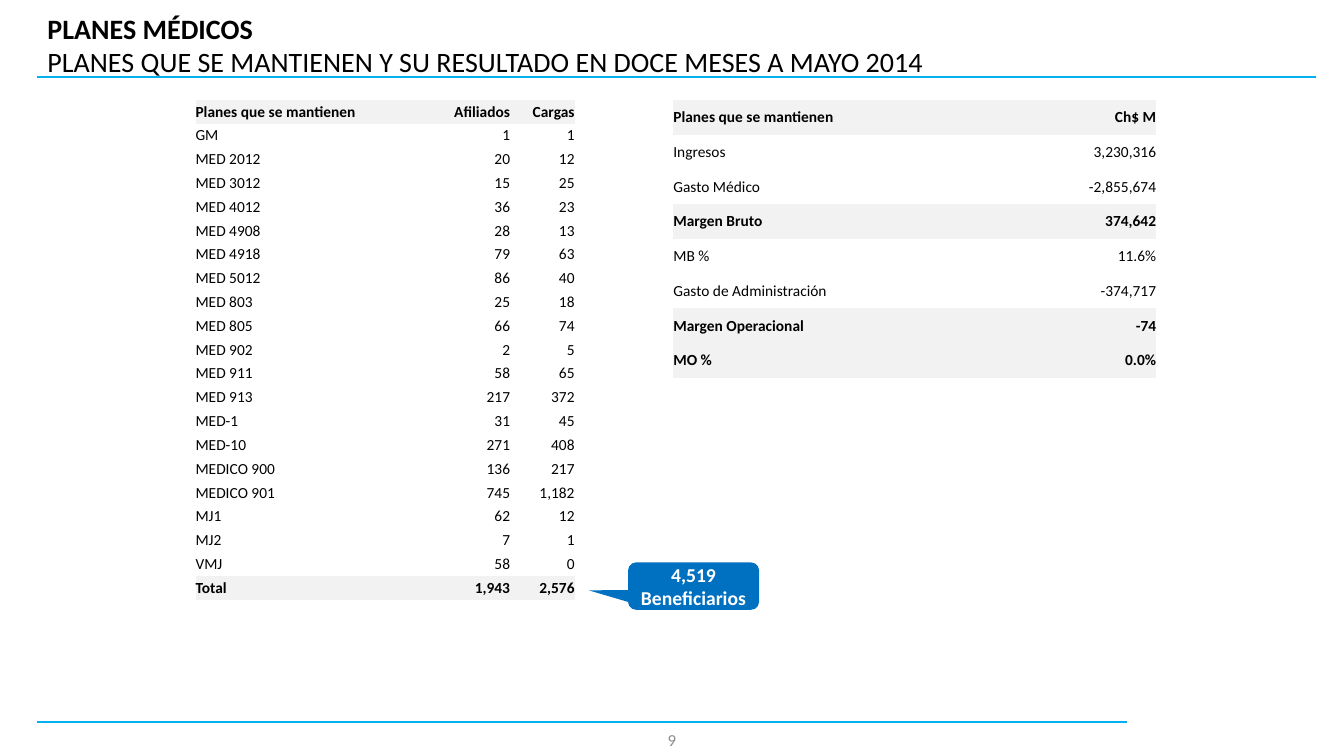
from lxml import etree
from pptx import Presentation
from pptx.dml.color import RGBColor
from pptx.enum.shapes import MSO_CONNECTOR, MSO_SHAPE
from pptx.enum.text import MSO_ANCHOR, MSO_AUTO_SIZE, PP_ALIGN
from pptx.oxml.ns import qn
from pptx.util import Inches, Pt

STRAIGHT = MSO_CONNECTOR.STRAIGHT
CALLOUT = MSO_SHAPE.ROUNDED_RECTANGULAR_CALLOUT
MIDDLE = MSO_ANCHOR.MIDDLE
NO_AUTOFIT = MSO_AUTO_SIZE.NONE
LEFT, CENTER, RIGHT = PP_ALIGN.LEFT, PP_ALIGN.CENTER, PP_ALIGN.RIGHT

BLACK = RGBColor(0x00, 0x00, 0x00)
WHITE = RGBColor(0xFF, 0xFF, 0xFF)
GRAY = RGBColor(0x8C, 0x8C, 0x8C)
BAND = RGBColor(0xF2, 0xF2, 0xF2)
BLUE = RGBColor(0x00, 0x70, 0xC0)
SKY = RGBColor(0x00, 0xB0, 0xF0)

FONT = "Calibri"
PLAIN_TABLE = "{2D5ABB26-0587-4C30-8999-92F81FD0307C}"

AFFILIATES = [
    ("Planes que se mantienen", "Afiliados", "Cargas"),
    ("GM", "1", "1"),
    ("MED 2012", "20", "12"),
    ("MED 3012", "15", "25"),
    ("MED 4012", "36", "23"),
    ("MED 4908", "28", "13"),
    ("MED 4918", "79", "63"),
    ("MED 5012", "86", "40"),
    ("MED 803", "25", "18"),
    ("MED 805", "66", "74"),
    ("MED 902", "2", "5"),
    ("MED 911", "58", "65"),
    ("MED 913", "217", "372"),
    ("MED-1", "31", "45"),
    ("MED-10", "271", "408"),
    ("MEDICO 900", "136", "217"),
    ("MEDICO 901", "745", "1,182"),
    ("MJ1", "62", "12"),
    ("MJ2", "7", "1"),
    ("VMJ", "58", "0"),
    ("Total", "1,943", "2,576"),
]
RESULTS = [
    ("Planes que se mantienen", "Ch$ M"),
    ("Ingresos", "3,230,316"),
    ("Gasto Médico", "-2,855,674"),
    ("Margen Bruto", "374,642"),
    ("MB %", "11.6%"),
    ("Gasto de Administración", "-374,717"),
    ("Margen Operacional", "-74"),
    ("MO %", "0.0%"),
]


class PlanSlide:
    """Draws styled elements placed by percentages of the slide's width and height."""

    def __init__(self, deck):
        self.column = deck.slide_width / 100
        self.row = deck.slide_height / 100
        self.slide = deck.slides.add_slide(deck.slide_layouts[5])
        self.shapes = self.slide.shapes

    def box(self, x, y, width, height):
        return (round(x * self.column), round(y * self.row),
                round(width * self.column), round(height * self.row))

    def fill_text(self, frame, text, size, color, align, bold=False):
        frame.text = text
        frame.word_wrap = True
        frame.vertical_anchor = MIDDLE
        self.style(frame.paragraphs[0], size, color, align, bold)

    def style(self, paragraph, size, color, align, bold):
        paragraph.alignment = align
        for run in paragraph.runs:
            run.font.name = FONT
            run.font.size = Pt(size)
            run.font.color.rgb = color
            run.font.bold = bold

    def title(self, heading, subtitle, *place):
        title = self.shapes.title
        title.left, title.top, title.width, title.height = self.box(*place)
        self.fill_text(title.text_frame, f"{heading}\v{subtitle}", 20, BLACK, LEFT)
        title.text_frame.auto_size = NO_AUTOFIT
        title.text_frame.paragraphs[0].runs[0].font.bold = True

    def rule(self, start, end, y):
        x, top, width, _ = self.box(start, y, end - start, 0)
        line = self.shapes.add_connector(STRAIGHT, x, top, x + width, top)
        line.line.color.rgb = SKY
        line.line.width = Pt(1.5)
        etree.SubElement(line._element.spPr, qn("a:effectLst"))

    def callout(self, text, adjustments, *place):
        callout = self.shapes.add_shape(CALLOUT, *self.box(*place))
        callout.shadow.inherit = False
        callout.fill.solid()
        callout.fill.fore_color.rgb = BLUE
        callout.line.fill.background()
        for index, value in enumerate(adjustments):
            callout.adjustments[index] = value
        self.fill_text(callout.text_frame, text, 14, WHITE, CENTER, True)

    def page_number(self, number, *place):
        label = self.shapes.add_textbox(*self.box(*place))
        self.fill_text(label.text_frame, number, 12, GRAY, CENTER)

    def table(self, rows, highlighted, x, y, widths, row_height):
        place = self.box(x, y, sum(widths), row_height * len(rows))
        table = self.shapes.add_table(len(rows), len(widths), *place).table
        table.first_row = table.horz_banding = False
        table._tbl.tblPr.find(qn("a:tableStyleId")).text = PLAIN_TABLE
        for column, width in zip(table.columns, widths):
            column.width = round(width * self.column)
        for r, values in enumerate(rows):
            table.rows[r].height = round(row_height * self.row)
            for c, value in enumerate(values):
                self.cell(table.cell(r, c), value, RIGHT if c else LEFT, r in highlighted)

    def cell(self, cell, value, align, highlighted):
        cell.margin_left = cell.margin_right = cell.margin_top = cell.margin_bottom = 0
        cell.vertical_anchor = MIDDLE
        if highlighted:
            cell.fill.solid()
            cell.fill.fore_color.rgb = BAND
        else:
            cell.fill.background()
        cell.text_frame.text = value
        self.style(cell.text_frame.paragraphs[0], 11, BLACK, align, highlighted)


def main():
    deck = Presentation()
    deck.slide_width, deck.slide_height = Inches(13.33), Inches(7.5)
    plans = PlanSlide(deck)
    plans.rule(2.78, 83.85, 95.47)
    plans.rule(2.78, 97.95, 10.13)
    plans.title("PLANES MÉDICOS",
                "PLANES QUE SE MANTIENEN Y SU RESULTADO EN DOCE MESES A MAYO 2014",
                2.78, 1.73, 92.25, 8.4)
    plans.callout("4,519 Beneficiarios", (-0.8, 0.09, 0.17), 46.73, 74.4, 9.75, 6.27)
    plans.page_number("9", 38.33, 95.2, 23.33, 5.33)
    plans.table(AFFILIATES, {0, len(AFFILIATES) - 1}, 14.55, 13.2, (17.18, 6.23, 4.8), 3.15)
    plans.table(RESULTS, {0, 3, 6, 7}, 50.1, 13.2, (16.58, 19.35), 4.6)
    deck.save("out.pptx")


if __name__ == "__main__":
    main()
